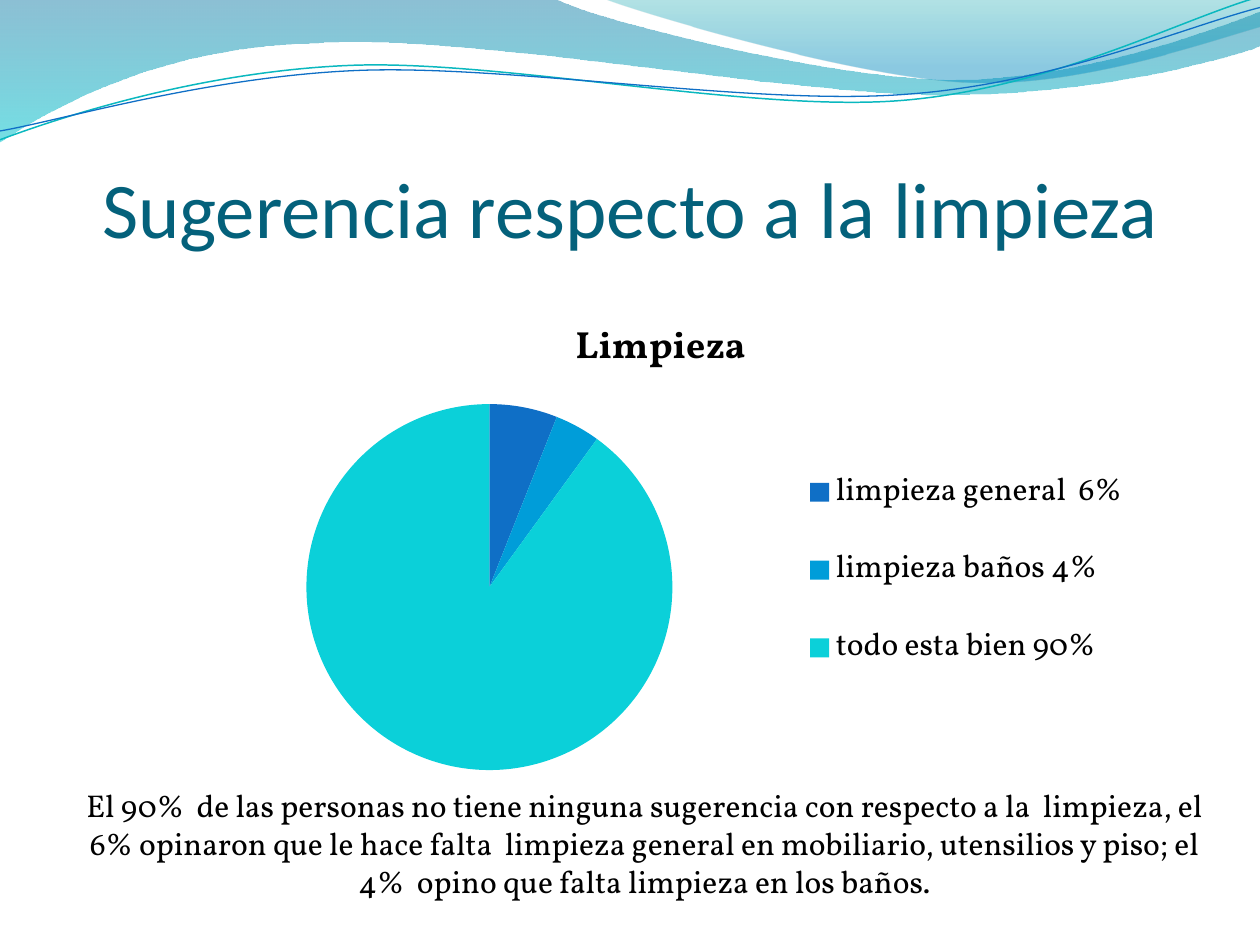
import math
from lxml import etree
from pptx import Presentation
from pptx.chart import data
from pptx.dml import color
from pptx.enum import chart as ch, text as tx
from pptx.oxml import ns
from pptx.util import Inches, Pt

HUES = {"title": "04617B", "ink": "000000", "blue": "0F6FC6", "sky": "009DD9",
        "aqua": "0BD0D9", "teal": "0AB8BF", "deep": "0074A1", "sea": "00C6CF",
        "mint": "00A1A9", "lake": "008BBF"}
TITLE = "Sugerencia respecto a la limpieza"
NOTE = ("El 90%  de las personas no tiene ninguna sugerencia con respecto a la  limpieza, "
        "el 6% opinaron que le hace falta  limpieza general en mobiliario, utensilios y piso; "
        "el 4%  opino que falta limpieza en los baños.")
NAME = "Limpieza"
PARTS = [("limpieza general  6%", 6, "blue"), ("limpieza baños 4%", 4, "sky"),
         ("todo esta bien 90%", 90, "aqua")]
LEGEND = {"x": 0.65, "y": 0.29, "w": 0.34, "h": 0.54}
BANDS = [
    ([(0, 0), (4.4, -0.01), (4.76, 0.17, 6.64, 0.63, 7.58, 0.63),
      (8.53, 0.63, 9.58, 0.26, 10, 0.09), (10.01, 0.36),
      (9.83, 0.44, 8.7, 0.76, 7.46, 0.75), (6.22, 0.75, 3.82, 0.28, 2.57, 0.34),
      (1.29, 0.36, 0.46, 0.83, -0.01, 1.13)],
     [(0, "deep", 45), (1, "sea", 55)]),
    ([(4.79, -0.01), (5.09, 0.11, 6.82, 0.62, 7.69, 0.65),
      (8.56, 0.69, 9.61, 0.32, 10, 0.21), (10, 0)],
     [(0, "mint", 30), (0.8, "lake", 45)]),
]
WAVES = [
    ([(0, 1.11), (0.48, 0.93, 1.58, 0.57, 2.77, 0.52), (3.95, 0.47, 5.93, 0.89, 7.13, 0.8),
      (8.33, 0.71, 9.38, 0.15, 9.98, -0.02)], "teal", 0.85),
    ([(0, 1.04), (0.47, 0.96, 1.64, 0.61, 2.83, 0.56), (4.03, 0.51, 5.97, 0.84, 7.17, 0.75),
      (8.36, 0.67, 9.41, 0.21, 10, 0.06)], "blue", 0.75),
]
TILT = -2.7
HUB = (5, 0.57)


def rgb(name):
    return color.RGBColor.from_string(HUES[name])


def pairs(move):
    return list(zip(move[::2], move[1::2]))


def level(move):
    turn = math.radians(-TILT)
    flat = []
    for x, y in pairs(move):
        dx, dy = x - HUB[0], y - HUB[1]
        flat += [HUB[0] + dx * math.cos(turn) - dy * math.sin(turn),
                 HUB[1] + dx * math.sin(turn) + dy * math.cos(turn)]
    return flat


def draw(slide, moves, close):
    ends = [[Inches(v) for v in move[-2:]] for move in moves]
    pen = slide.shapes.build_freeform(*ends[0])
    pen.add_line_segments(ends[1:], close=close)
    shape = pen.convert_to_shape()
    shape.shadow.inherit = False
    lines = list(shape.element.iter(ns.qn("a:lnTo")))
    for line, move in zip(lines, moves[1:]):
        if len(move) == 6:
            curve = etree.Element(ns.qn("a:cubicBezTo"))
            for x, y in pairs(move):
                etree.SubElement(curve, ns.qn("a:pt"), x=str(Inches(x) - shape.left),
                                 y=str(Inches(y) - shape.top))
            line.getparent().replace(line, curve)
    return shape


def add_band(slide, moves, stops):
    shape = draw(slide, moves, True)
    shape.line.fill.background()
    shape.fill.gradient()
    shape.fill.gradient_angle = 270
    for stop, (spot, hue, alpha) in zip(shape.fill.gradient_stops, stops):
        stop.position = spot
        stop.color.rgb = rgb(hue)
    tags = shape.element.iter(ns.qn("a:srgbClr"))
    for tag, (spot, hue, alpha) in zip(tags, stops):
        etree.SubElement(tag, ns.qn("a:alpha"), val=str(alpha * 1000))


def add_wave(slide, moves, hue, width):
    shape = draw(slide, [level(move) for move in moves], False)
    shape.rotation = TILT
    shape.fill.background()
    shape.line.color.rgb = rgb(hue)
    shape.line.width = Pt(width)


def style(font, face="Vollkorn", size=18, hue="ink", bold=False):
    font.name, font.size, font.bold = face, Pt(size), bold
    font.color.rgb = rgb(hue)


def write(box, words, at, anchor=tx.MSO_ANCHOR.TOP, pads=(0.1, 0.05, 0.1, 0.05), **look):
    box.left, box.top, box.width, box.height = map(Inches, at)
    frame = box.text_frame
    frame.word_wrap = True
    frame.auto_size = tx.MSO_AUTO_SIZE.NONE
    frame.vertical_anchor = anchor
    (frame.margin_left, frame.margin_top,
     frame.margin_right, frame.margin_bottom) = map(Inches, pads)
    para = frame.paragraphs[0]
    para.alignment = tx.PP_ALIGN.CENTER
    run = para.add_run()
    run.text = words
    style(run.font, **look)


def place_legend(pie):
    spot = next(pie.element.iter(ns.qn("c:legendPos")))
    for old in spot.getparent().findall(ns.qn("c:layout")):
        spot.getparent().remove(old)
    layout = etree.Element(ns.qn("c:layout"))
    manual = etree.SubElement(layout, ns.qn("c:manualLayout"))
    for mode in ("xMode", "yMode"):
        etree.SubElement(manual, ns.qn("c:" + mode), val="edge")
    for key, value in LEGEND.items():
        etree.SubElement(manual, ns.qn("c:" + key), val=str(value))
    spot.addnext(layout)


def add_pie(slide, at):
    info = data.CategoryChartData()
    info.categories = [label for label, value, hue in PARTS]
    info.add_series(NAME, [value for label, value, hue in PARTS])
    pie = slide.shapes.add_chart(ch.XL_CHART_TYPE.PIE, *map(Inches, at), info).chart
    style(pie.font)
    pie.has_title = True
    pie.chart_title.text_frame.text = NAME
    style(pie.chart_title.text_frame.paragraphs[0].runs[0].font, size=21.6, bold=True)
    pie.has_legend = True
    pie.legend.position = ch.XL_LEGEND_POSITION.RIGHT
    pie.legend.include_in_layout = False
    style(pie.legend.font)
    place_legend(pie)
    plot = pie.plots[0]
    plot.vary_by_categories = True
    for i, (label, value, hue) in enumerate(PARTS):
        fill = plot.series[0].points[i].format.fill
        fill.solid()
        fill.fore_color.rgb = rgb(hue)


def main():
    deck = Presentation()
    deck.slide_width, deck.slide_height = Inches(10), Inches(7.5)
    slide = deck.slides.add_slide(deck.slide_layouts[5])
    for band in BANDS:
        add_band(slide, *band)
    for wave in WAVES:
        add_wave(slide, *wave)
    write(slide.shapes.title, TITLE, (0.5, 0.77, 9, 1.25), anchor=tx.MSO_ANCHOR.BOTTOM,
          pads=(0, 0.05, 0, 0), face="Calibri", size=45, hue="title")
    add_pie(slide, (1.46, 2.33, 7.57, 3.92))
    write(slide.shapes.add_textbox(0, 0, 0, 0), NOTE, (0.51, 6.19, 9.21, 1.01))
    deck.save("out.pptx")


if __name__ == "__main__":
    main()
